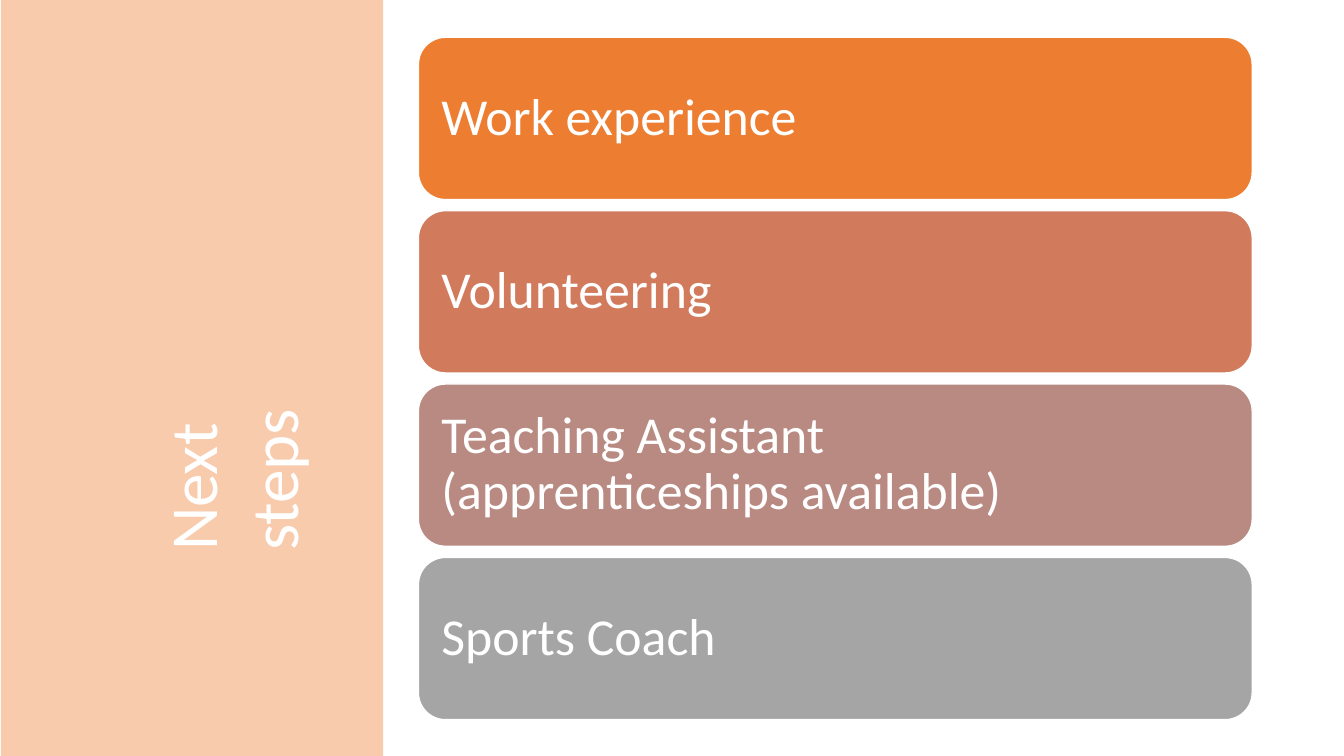
"""Build the "Next steps" slide: a side panel with a turned title and four option bars."""
from pptx import Presentation
from pptx import util as u
from pptx.dml.color import RGBColor
from pptx.enum import shapes, text


def rgb(code):
    return RGBColor.from_string(code)


def write(tf, words, size, inset_x, inset_y, anchor, spacing=1.0):
    tf.word_wrap = True
    tf.vertical_anchor = anchor
    tf.margin_left = tf.margin_right = u.Inches(inset_x)
    tf.margin_top = tf.margin_bottom = u.Inches(inset_y)
    p = tf.paragraphs[0]
    p.text = words
    p.alignment = text.PP_ALIGN.LEFT
    p.line_spacing = spacing
    for r in p.runs:
        r.font.name = "Calibri"
        r.font.size = u.Pt(size)
        r.font.color.rgb = rgb("FFFFFF")


prs = Presentation()
prs.slide_width, prs.slide_height = u.Inches(13.33), u.Inches(7.5)
s = prs.slides.add_slide(prs.slide_layouts[5])

bar_left, bar_top, bar_width, bar_height, pitch = 4.15, 0.37, 8.27, 1.61, 1.72
options = [
    ("Work experience", "ED7D31"),
    ("Volunteering", "D17B5C"),
    ("Teaching Assistant \v(apprenticeships available)", "B98A82"),
    ("Sports Coach", "A5A5A5"),
]
for row, (words, color) in enumerate(options):
    bar = s.shapes.add_shape(
        shapes.MSO_SHAPE.ROUNDED_RECTANGLE,
        u.Inches(bar_left), u.Inches(bar_top + row * pitch),
        u.Inches(bar_width), u.Inches(bar_height))
    bar.shadow.inherit = False
    bar.fill.solid()
    bar.fill.fore_color.rgb = rgb(color)
    bar.line.color.rgb = rgb("FFFFFF")
    bar.line.width = u.Pt(1)
    write(bar.text_frame, words, 37, 0.15, 0.15, text.MSO_ANCHOR.MIDDLE, spacing=0.9)

panel = s.shapes.add_shape(
    shapes.MSO_SHAPE.RECTANGLE, u.Inches(0.01), 0, u.Inches(3.79), prs.slide_height)
panel.shadow.inherit = False
panel.fill.solid()
panel.fill.fore_color.rgb = rgb("F8CBAD")
panel.line.fill.background()

title = s.shapes.title
title.left, title.top = u.Inches(0.4), u.Inches(3.61)
title.width, title.height = u.Inches(3), u.Inches(0.91)
title.rotation = 270
write(title.text_frame, "Next steps", 48, 0.1, 0.05, text.MSO_ANCHOR.TOP)
title.text_frame.auto_size = text.MSO_AUTO_SIZE.SHAPE_TO_FIT_TEXT
s.shapes._spTree.append(title._element)

prs.save("out.pptx")
